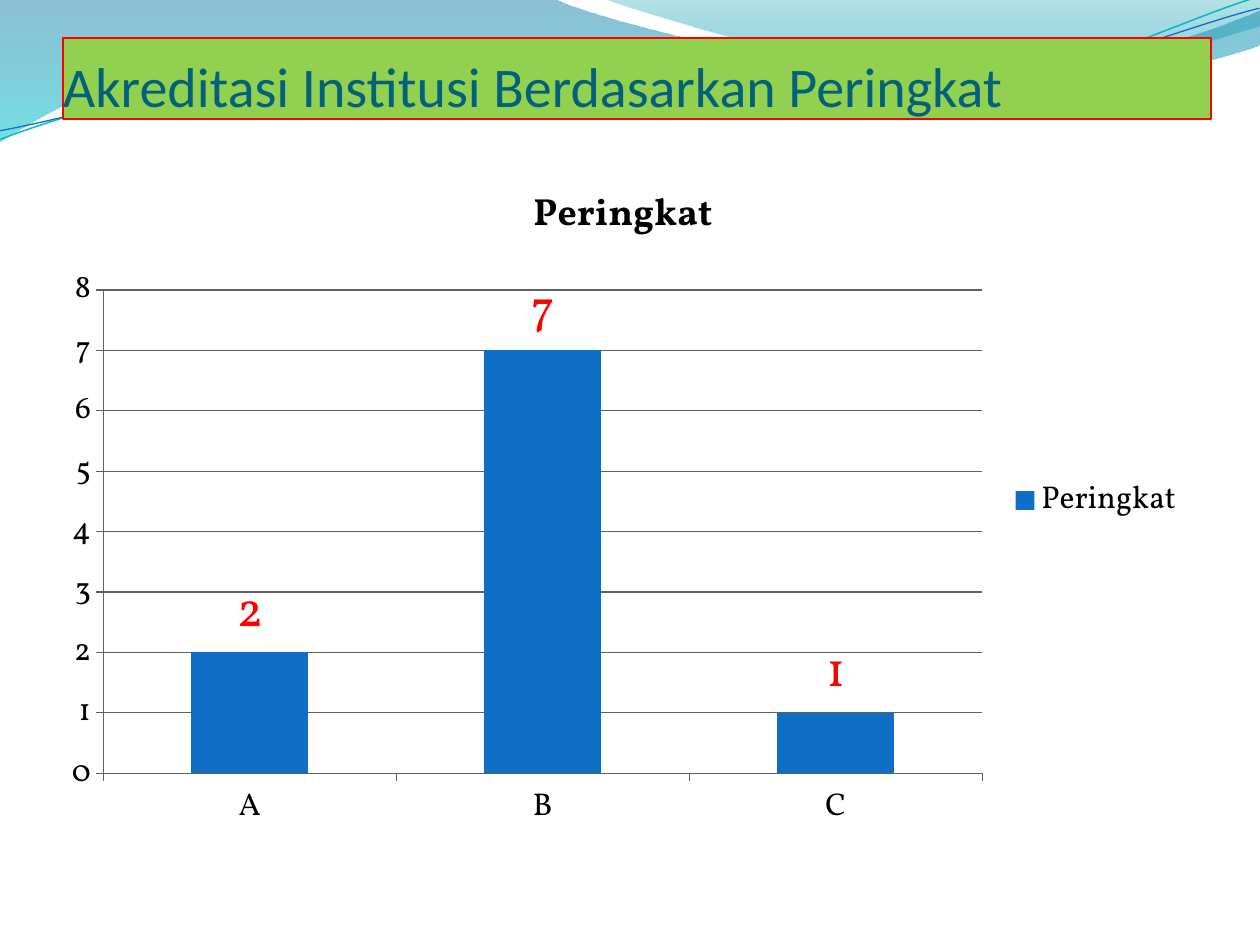
from dataclasses import dataclass

from lxml import etree
from pptx import Presentation
from pptx.chart.data import CategoryChartData
from pptx.dml.color import RGBColor
from pptx.enum.chart import XL_CHART_TYPE, XL_LABEL_POSITION, XL_LEGEND_POSITION, XL_TICK_MARK
from pptx.enum.shapes import MSO_SHAPE
from pptx.enum.text import MSO_ANCHOR, PP_ALIGN
from pptx.oxml.ns import qn
from pptx.util import Pt

COLUMN = XL_CHART_TYPE.COLUMN_CLUSTERED
OUTSIDE = XL_LABEL_POSITION.OUTSIDE_END
RIGHT = XL_LEGEND_POSITION.RIGHT
TICK_CROSS, TICK_NONE = XL_TICK_MARK.CROSS, XL_TICK_MARK.NONE
TICK_OUT = XL_TICK_MARK.OUTSIDE
RECT = MSO_SHAPE.RECTANGLE
BOTTOM, LEFT = MSO_ANCHOR.BOTTOM, PP_ALIGN.LEFT

PX = 914400 // 126


@dataclass(frozen=True)
class Theme:
    title_font: str = "Calibri"
    chart_font: str = "Vollkorn"
    title_size: float = 32
    chart_title_size: float = 21.6
    chart_size: float = 18
    label_size: float = 28
    title_color: str = "04617B"
    title_fill: str = "92D050"
    accent: str = "FF0000"
    bar: str = "0F6FC6"
    teal: str = "0AB8BF"
    text: str = "000000"
    grid: str = "606060"
    band: tuple = (("0074A1", 45, 0), ("00C6CF", 55, 1))
    crest: tuple = (("00A1A9", 30, 0), ("008BBF", 45, 0.8))


THEME = Theme()

BAND_BOX = (-1, -1, 1262, 143)
BAND = [
    (0, 0), (554, -1),
    (600, 21, 837, 79, 955, 79), (1075, 79, 1207, 33, 1260, 11), (1261, 45),
    (1237, 55, 1096, 96, 940, 94), (784, 94, 481, 35, 324, 43),
    (163, 45, 58, 105, -1, 142), (0, 0),
]
CREST_BOX = (604, -1, 656, 88)
CREST = [
    (604, -1), (641, 14, 859, 78, 969, 82),
    (1079, 87, 1211, 40, 1260, 26), (1260, 0), (604, -1),
]
WAVE_TILT = 357.3
TEAL_BOX = (-3, 28, 1263, 89)
TEAL_WAVE = [
    (-3, 110), (58, 90, 199, 52, 350, 53),
    (499, 53, 745, 117, 896, 114), (1048, 109, 1184, 45, 1260, 27),
]
BLUE_BOX = (-3, 38, 1264, 73)
BLUE_WAVE = [
    (-2, 101), (57, 94, 207, 57, 357, 58),
    (509, 58, 751, 112, 902, 107), (1052, 104, 1188, 52, 1262, 38),
]


def rgb(color):
    return RGBColor.from_string(color)


def set_line(line, color, width):
    line.color.rgb = rgb(color)
    line.width = Pt(width)


def set_font(font, name, size, color, bold=False):
    font.name, font.size, font.bold = name, Pt(size), bold
    font.color.rgb = rgb(color)


def add_curve(s, box, segments, close):
    left, top, width, height = box
    builder = s.shapes.build_freeform(*segments[0], scale=PX)
    builder.add_line_segments([seg[-2:] for seg in segments[1:]], close=close)
    sp = builder.convert_to_shape()
    sp.left, sp.top, sp.width, sp.height = (v * PX for v in box)
    sp.shadow.inherit = False
    outline = next(sp._element.iter(qn("a:path")))
    outline.set("w", str(width * PX))
    outline.set("h", str(height * PX))
    for step, seg in zip(list(outline), segments):
        if len(seg) == 6:
            step.tag = qn("a:cubicBezTo")
        for child in list(step):
            step.remove(child)
        for x, y in zip(seg[::2], seg[1::2]):
            pt = etree.SubElement(step, qn("a:pt"))
            pt.set("x", str((x - left) * PX))
            pt.set("y", str((y - top) * PX))
    return sp


def add_waves(s, box):
    dx, dy = box
    for (x, y, w, h), segments, stops in (
        (BAND_BOX, BAND, THEME.band),
        (CREST_BOX, CREST, THEME.crest),
    ):
        sp = add_curve(s, (x, y, w, h), segments, True)
        sp.left, sp.top = (x + dx) * PX, (y + dy) * PX
        sp.line.fill.background()
        sp.fill.gradient()
        sp.fill.gradient_angle = 270
        for stop, (color, _, position) in zip(sp.fill.gradient_stops, stops):
            stop.color.rgb = rgb(color)
            stop.position = position
        colors = sp._element.spPr.find(qn("a:gradFill")).iter(qn("a:srgbClr"))
        for node, (_, opacity, _) in zip(colors, stops):
            etree.SubElement(node, qn("a:alpha")).set("val", str(opacity * 1000))
    for (x, y, w, h), segments, color, width in (
        (TEAL_BOX, TEAL_WAVE, THEME.teal, 0.85),
        (BLUE_BOX, BLUE_WAVE, THEME.bar, 0.75),
    ):
        sp = add_curve(s, (x, y, w, h), segments, False)
        sp.left, sp.top = (x + dx) * PX, (y + dy) * PX
        sp.rotation = WAVE_TILT
        sp.fill.background()
        set_line(sp.line, color, width)


def add_title(s, box, text):
    sp = s.shapes.add_shape(RECT, *(v * PX for v in box))
    sp.shadow.inherit = False
    sp.fill.solid()
    sp.fill.fore_color.rgb = rgb(THEME.title_fill)
    set_line(sp.line, THEME.accent, 0.75)
    tf = sp.text_frame
    tf.word_wrap = True
    tf.vertical_anchor = BOTTOM
    tf.margin_left = tf.margin_right = tf.margin_bottom = 0
    tf.margin_top = 6 * PX
    p = tf.paragraphs[0]
    p.alignment = LEFT
    r = p.add_run()
    r.text = text
    set_font(r.font, THEME.title_font, THEME.title_size, THEME.title_color)


def add_rank_chart(s, box, name, categories, values):
    data = CategoryChartData()
    data.categories = categories
    data.add_series(name, values)
    chart = s.shapes.add_chart(COLUMN, *(v * PX for v in box), data).chart
    set_font(chart.font, THEME.chart_font, THEME.chart_size, THEME.text)

    chart.has_title = True
    r = chart.chart_title.text_frame.paragraphs[0].add_run()
    r.text = name
    set_font(r.font, THEME.chart_font, THEME.chart_title_size, THEME.text, True)
    chart.chart_title.include_in_layout = False

    chart.has_legend = True
    chart.legend.position = RIGHT
    chart.legend.include_in_layout = False

    for axis in (chart.category_axis, chart.value_axis):
        axis.major_tick_mark, axis.minor_tick_mark = TICK_OUT, TICK_NONE
        set_line(axis.format.line, THEME.grid, 0.75)
    chart.value_axis.has_major_gridlines = True
    set_line(chart.value_axis.major_gridlines.format.line, THEME.grid, 0.75)

    plot = chart.plots[0]
    plot.gap_width = 150
    plot.vary_by_categories = False
    series = plot.series[0]
    series.format.fill.solid()
    series.format.fill.fore_color.rgb = rgb(THEME.bar)
    labels = series.data_labels
    labels.show_value = True
    labels.position = OUTSIDE
    set_font(labels.font, THEME.chart_font, THEME.label_size, THEME.accent)


def main():
    prs = Presentation()
    prs.slide_width, prs.slide_height = 1260 * PX, 945 * PX
    s = prs.slides.add_slide(prs.slide_layouts[6])
    add_waves(s, (0, 0))
    add_title(s, (63, 38, 1148, 81), "Akreditasi Institusi Berdasarkan Peringkat")
    add_rank_chart(s, (49, 157, 1148, 687), "Peringkat", ("A", "B", "C"), (2, 7, 1))
    prs.save("out.pptx")


if __name__ == "__main__":
    main()
